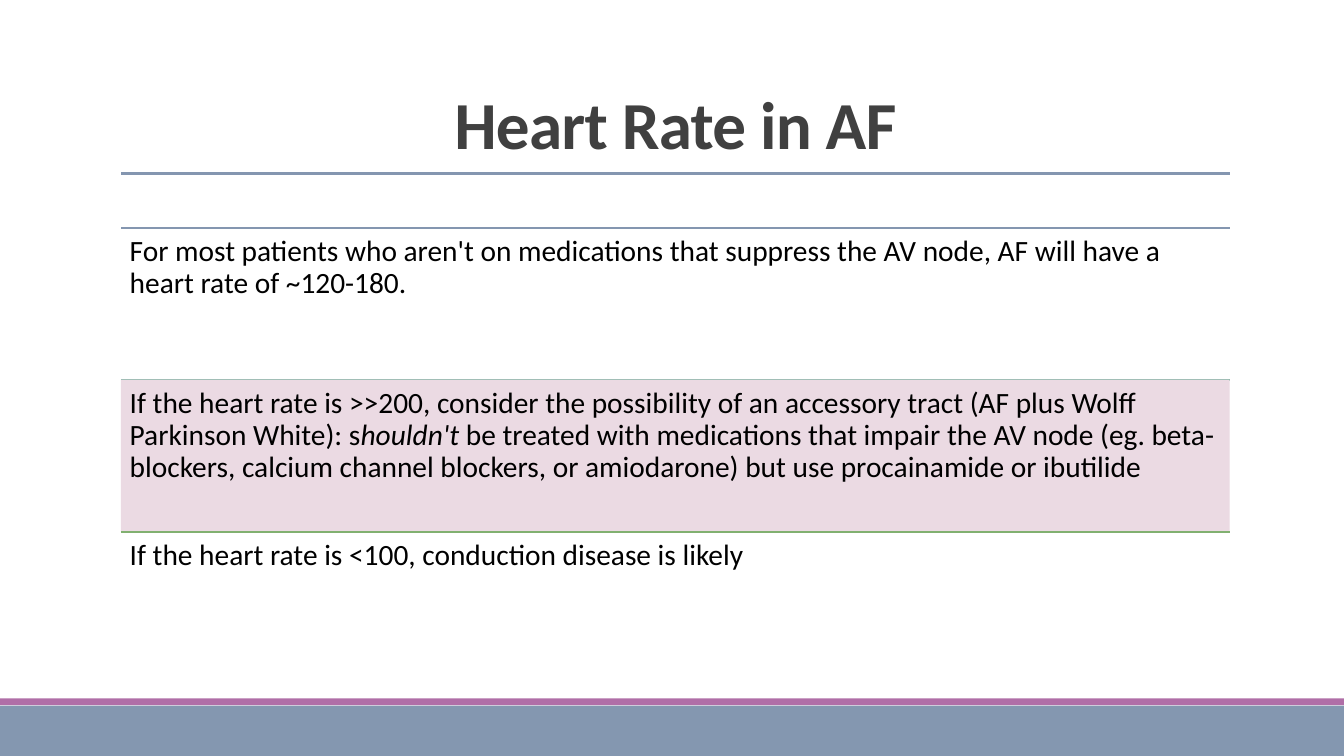
from dataclasses import dataclass

from lxml import etree
from pptx import Presentation
from pptx import util as u
from pptx.dml.color import RGBColor
from pptx.enum import shapes, text
from pptx.oxml.ns import qn


@dataclass(frozen=True)
class Theme:
    font: str = "Calibri"
    title_size: float = 48
    body_size: float = 21
    title_color: str = "404040"
    body_color: str = "000000"
    footer: str = "8497B0"
    accent: str = "B06EA7"
    rule: str = "8496B0"
    teal: str = "7AB09E"
    green: str = "81B070"
    highlight: str = "EBDAE3"


class SlideBuilder:
    def __init__(self, slide, theme):
        self.slide = slide
        self.theme = theme

    def set_font(self, paragraph, size, color, bold=False):
        font = paragraph.font
        font.name = self.theme.font
        font.size = u.Pt(size)
        font.bold = bold
        font.color.rgb = RGBColor.from_string(color)

    def title(self, wording, left, top, width, height):
        shape = self.slide.shapes.title
        shape.left, shape.top = u.Cm(left), u.Cm(top)
        shape.width, shape.height = u.Cm(width), u.Cm(height)
        frame = shape.text_frame
        frame.auto_size = text.MSO_AUTO_SIZE.NONE
        frame.vertical_anchor = text.MSO_ANCHOR.BOTTOM
        paragraph = frame.paragraphs[0]
        run = paragraph.add_run()
        run.text = wording
        run._r.get_or_add_rPr().set("spc", "-50")
        paragraph.alignment = text.PP_ALIGN.CENTER
        paragraph.line_spacing = 0.85
        self.set_font(paragraph, self.theme.title_size, self.theme.title_color, bold=True)

    def bar(self, left, top, width, height, color):
        shape = self.slide.shapes.add_shape(
            shapes.MSO_SHAPE.RECTANGLE, u.Cm(left), u.Cm(top), u.Cm(width), u.Cm(height))
        shape.shadow.inherit = False
        shape.fill.solid()
        shape.fill.fore_color.rgb = RGBColor.from_string(color)
        shape.line.fill.background()

    def rule(self, left, top, width, color, weight):
        line = self.slide.shapes.add_connector(
            shapes.MSO_CONNECTOR.STRAIGHT, u.Cm(left), u.Cm(top), u.Cm(left + width), u.Cm(top))
        line.line.color.rgb = RGBColor.from_string(color)
        line.line.width = u.Pt(weight)
        etree.SubElement(line._element.spPr, qn("a:effectLst"))

    def body(self, runs, left, top, width, height):
        """Add a text box from (wording, italic) pairs."""
        box = self.slide.shapes.add_textbox(u.Cm(left), u.Cm(top), u.Cm(width), u.Cm(height))
        frame = box.text_frame
        frame.word_wrap = True
        frame.margin_left = frame.margin_right = u.Cm(0.22)
        frame.margin_top = frame.margin_bottom = u.Cm(0.22)
        paragraph = frame.paragraphs[0]
        paragraph.line_spacing = 0.9
        for wording, italic in runs:
            run = paragraph.add_run()
            run.text = wording
            if italic:
                run.font.italic = True
        self.set_font(paragraph, self.theme.body_size, self.theme.body_color)


def main():
    theme = Theme()
    presentation = Presentation()
    presentation.slide_width, presentation.slide_height = u.Cm(33.87), u.Cm(19.05)
    slide = presentation.slides.add_slide(presentation.slide_layouts[5])
    builder = SlideBuilder(slide, theme)
    left, width = 3.05, 27.94

    # Footer bands
    builder.bar(0, 17.78, 33.87, 1.27, theme.footer)
    builder.bar(0, 17.6, 33.87, 0.17, theme.accent)

    # Title and its rule
    builder.title("Heart Rate in AF", left, 0.79, width, 3.45)
    builder.rule(left, 4.37, width, theme.rule, 2.25)

    # Rows: rule colour, fill, text
    rows = [
        (theme.rule, None, [
            ("For most patients who aren't on medications that suppress the AV node, "
             "AF will have a heart rate of ~120-180.", False)]),
        (theme.teal, theme.highlight, [
            ("If the heart rate is >>200, consider the possibility of an accessory tract "
             "(AF plus Wolff Parkinson White): s", False),
            ("houldn't", True),
            (" be treated with medications that impair the AV node (eg. beta-blockers, "
             "calcium channel blockers, or amiodarone) but use procainamide or ibutilide", False)]),
        (theme.green, None, [
            ("If the heart rate is <100, conduction disease is likely", False)]),
    ]
    first_top, row_height = 5.74, 3.83
    for index, (rule_color, fill, runs) in enumerate(rows):
        top = first_top + index * row_height
        builder.rule(left, top, width, rule_color, 1.25)
        if fill:
            builder.bar(left, top, width, row_height, fill)
        builder.body(runs, left, top, width, row_height)

    presentation.save("out.pptx")


if __name__ == "__main__":
    main()
